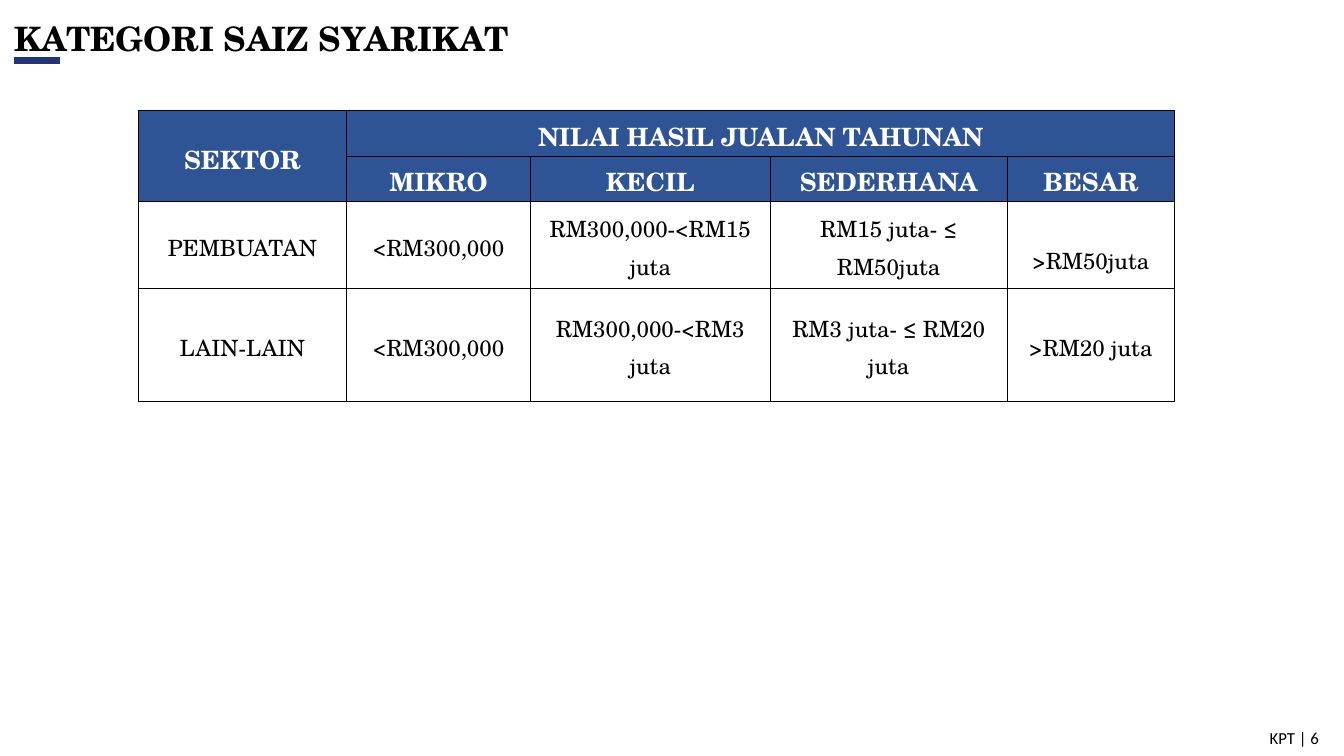
import pptx
import pptx.util
import pptx.oxml
import pptx.oxml.ns
from pptx.dml.color import RGBColor
from pptx.enum.text import MSO_ANCHOR, MSO_AUTO_SIZE, PP_ALIGN
from pptx.enum.shapes import MSO_CONNECTOR

Inches, Pt = pptx.util.Inches, pptx.util.Pt

# Content
TITLE = "KATEGORI SAIZ SYARIKAT"
FOOTER = "KPT | 6"
ROWS = [
    ["SEKTOR", "NILAI HASIL JUALAN TAHUNAN", "", "", ""],
    ["", "MIKRO", "KECIL", "SEDERHANA", "BESAR"],
    ["PEMBUATAN", "<RM300,000", "RM300,000-<RM15 juta", "RM15 juta- ≤ RM50juta", ">RM50juta"],
    ["LAIN-LAIN", "<RM300,000", "RM300,000-<RM3 juta", "RM3 juta- ≤ RM20 juta", ">RM20 juta"],
]
HEADER_ROWS = 2
COL_WIDTHS = [2.07, 1.82, 2.38, 2.35, 1.66]
ROW_HEIGHTS = [0.45, 0.45, 0.86, 1.12]
LOWERED_CELL, LOWERED_BY = (2, 4), 0.26

THEME = {
    "font": "TeX Gyre Schola", "footer_font": "Calibri",
    "text": "000000", "header_text": "FFFFFF", "header_fill": "2F5496",
    "border": "000000", "accent": "22357B",
    "title_size": 24, "header_size": 18, "cell_size": 16, "footer_size": 12,
}


def style(p, size, color, font=THEME["font"], bold=False, align=PP_ALIGN.LEFT):
    p.alignment = align
    for r in p.runs:
        r.font.name, r.font.size, r.font.bold = font, Pt(size), bold
        r.font.color.rgb = RGBColor.from_string(color)


def add_borders(cell):
    tcPr = cell._tc.get_or_add_tcPr()
    for side in ("lnL", "lnR", "lnT", "lnB"):
        tcPr.append(pptx.oxml.parse_xml(
            f'<a:{side} {pptx.oxml.ns.nsdecls("a")} w="{Pt(1)}"><a:solidFill>'
            f'<a:srgbClr val="{THEME["border"]}"/></a:solidFill></a:{side}>'))


def add_title(s):
    sp = s.shapes.title
    sp.left, sp.top, sp.width, sp.height = map(Inches, (0.14, 0.15, 6.27, 0.46))
    tf = sp.text_frame
    tf.text = TITLE
    tf.auto_size = MSO_AUTO_SIZE.NONE
    tf.vertical_anchor = MSO_ANCHOR.MIDDLE
    tf.margin_left = tf.margin_right = 0
    style(tf.paragraphs[0], THEME["title_size"], THEME["text"], bold=True)

    # Accent line below the title
    line = s.shapes.add_connector(MSO_CONNECTOR.STRAIGHT, *map(Inches, (0.14, 0.6, 0.6, 0.6)))
    line.line.color.rgb = RGBColor.from_string(THEME["accent"])
    line.line.width = Pt(4.5)
    line._element.spPr.append(pptx.oxml.parse_xml(
        f'<a:effectLst {pptx.oxml.ns.nsdecls("a")}/>'))


def add_size_table(s):
    table = s.shapes.add_table(
        len(ROWS), len(COL_WIDTHS), Inches(1.37), Inches(1.1),
        Inches(sum(COL_WIDTHS)), Inches(sum(ROW_HEIGHTS))).table
    table.first_row = table.horz_banding = False
    for col, width in zip(table.columns, COL_WIDTHS):
        col.width = Inches(width)
    for row, height in zip(table.rows, ROW_HEIGHTS):
        row.height = Inches(height)

    for i, texts in enumerate(ROWS):
        header = i < HEADER_ROWS
        for j, text in enumerate(texts):
            cell = table.cell(i, j)
            add_borders(cell)
            if header:
                cell.fill.solid()
                cell.fill.fore_color.rgb = RGBColor.from_string(THEME["header_fill"])
            else:
                cell.fill.background()
            cell.margin_left = cell.margin_right = Inches(0.07)
            cell.margin_top = Inches(LOWERED_BY if (i, j) == LOWERED_CELL else 0)
            cell.margin_bottom = 0
            cell.vertical_anchor = MSO_ANCHOR.MIDDLE
            if text:
                cell.text = text
                p = cell.text_frame.paragraphs[0]
                p.line_spacing = 1.15
                style(p, THEME["header_size" if header else "cell_size"],
                      THEME["header_text" if header else "text"],
                      bold=header, align=PP_ALIGN.CENTER)

    # Merged headings
    table.cell(0, 0).merge(table.cell(1, 0))
    table.cell(0, 1).merge(table.cell(0, 4))


def add_footer(s):
    tf = s.shapes.add_textbox(*map(Inches, (10.18, 7.12, 3, 0.4))).text_frame
    tf.word_wrap = True
    tf.vertical_anchor = MSO_ANCHOR.MIDDLE
    tf.text = FOOTER
    style(tf.paragraphs[0], THEME["footer_size"], THEME["text"],
          font=THEME["footer_font"], align=PP_ALIGN.RIGHT)


def main():
    prs = pptx.Presentation()
    prs.slide_width, prs.slide_height = Inches(13.33), Inches(7.5)
    s = prs.slides.add_slide(prs.slide_layouts.get_by_name("Title Only"))
    add_title(s)
    add_size_table(s)
    add_footer(s)
    prs.save("out.pptx")


if __name__ == "__main__":
    main()
